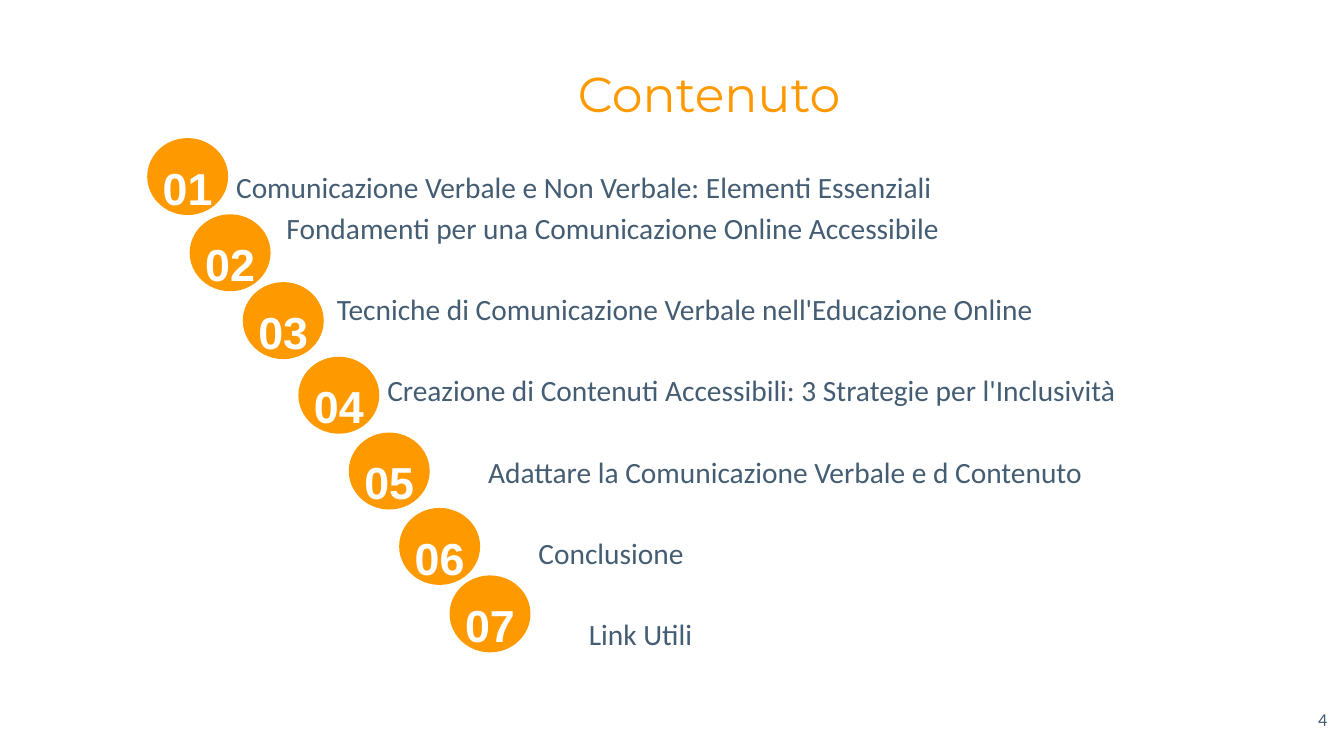
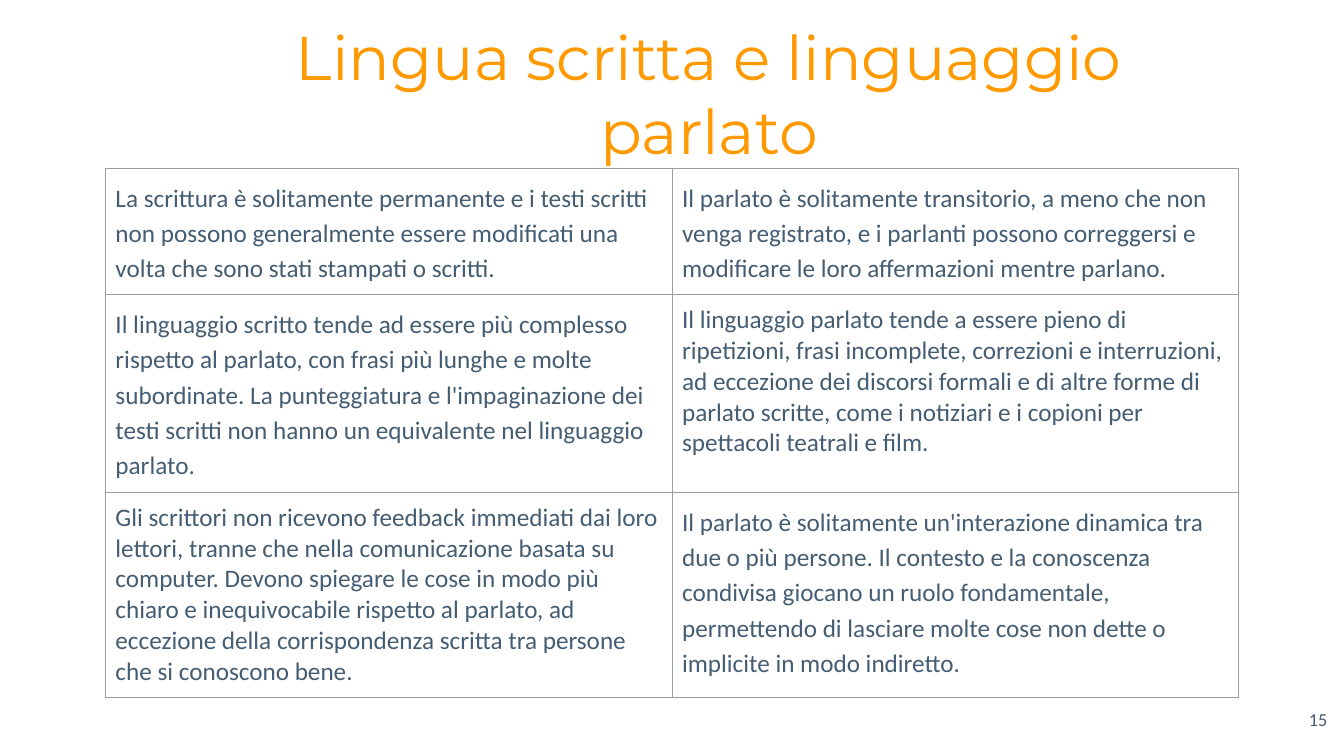
from lxml import etree
from pptx import Presentation
from pptx.dml.color import RGBColor
from pptx.enum import shapes, text
from pptx.oxml.ns import qn
from pptx.util import Cm, Pt

COLORS = {"accent": "FF9900", "body": "445D73", "white": "FFFFFF", "rule": "9E9E9E"}


def format_frame(tf, size, font, color, align, inset, spacing=1.0, bold=False):
    """Set the insets of a text frame and the look of all its runs."""
    tf.margin_left = tf.margin_right = tf.margin_top = tf.margin_bottom = Cm(inset)
    for p in tf.paragraphs:
        p.alignment = align
        p.line_spacing = spacing
        for r in p.runs:
            r.font.size = Pt(size)
            r.font.name = font
            r.font.bold = bold
            r.font.color.rgb = RGBColor.from_string(COLORS[color])


def add_slide(layout, title, title_size, number):
    """Add a slide with the shared title style and page number."""
    s = prs.slides.add_slide(prs.slide_layouts[layout])
    sp = s.shapes.title
    sp.left, sp.top, sp.width, sp.height = Cm(4.32), Cm(1.3), Cm(27.1), Cm(2.1)
    tf = sp.text_frame
    tf.text = title
    tf.auto_size = text.MSO_AUTO_SIZE.NONE
    tf.vertical_anchor = text.MSO_ANCHOR.MIDDLE
    format_frame(tf, title_size, "Montserrat", "accent", text.PP_ALIGN.CENTER, 0.36)

    tf = s.shapes.add_textbox(Cm(31.67), Cm(17.6), Cm(2.03), Cm(1.45)).text_frame
    tf.text = number
    tf.word_wrap = True
    format_frame(tf, 13, "Calibri", "body", text.PP_ALIGN.RIGHT, 0.25)
    return s


prs = Presentation()
prs.slide_width, prs.slide_height = Cm(33.87), Cm(19.05)

# Contents: topic, indent, space before (pt), left and top of the number disc
topics = [
    ("Comunicazione Verbale e Non Verbale: Elementi Essenziali", 0, 0, 3.71, 3.48),
    ("Fondamenti per una Comunicazione Online Accessibile", 1.27, 0, 4.78, 5.4),
    ("Tecniche di Comunicazione Verbale nell'Educazione Online", 2.54, 29, 6.12, 7.11),
    ("Creazione di Contenuti Accessibili: 3 Strategie per l'Inclusività", 3.81, 29, 7.52, 8.99),
    ("Adattare la Comunicazione Verbale e d Contenuto", 6.35, 29, 8.79, 10.9),
    ("Conclusione", 7.62, 29, 10.06, 12.8),
    ("Link Utili", 8.89, 29, 11.33, 14.5),
]
s = add_slide(1, "Contenuto", 35, "4")
body = s.placeholders[1]
body.left, body.top, body.width, body.height = Cm(5.59), Cm(3.78), Cm(27.66), Cm(12.4)
tf = body.text_frame
tf.text = "\n".join(topic[0] for topic in topics)
tf.auto_size = text.MSO_AUTO_SIZE.NONE
for p, (_, indent, before, _, _) in zip(tf.paragraphs, topics):
    pPr = p._p.get_or_add_pPr()
    pPr.set("marL", str(Cm(indent)))
    pPr.set("indent", "0")
    etree.SubElement(pPr, qn("a:buNone"))
    p.space_before = Pt(before)
format_frame(tf, 21, "Calibri", "body", text.PP_ALIGN.LEFT, 0.36, 1.15)

for n, (_, _, _, left, top) in enumerate(topics, 1):
    disc = s.shapes.add_shape(shapes.MSO_SHAPE.OVAL, Cm(left), Cm(top), Cm(2.04), Cm(1.94))
    disc.shadow.inherit = False
    disc.fill.solid()
    disc.fill.fore_color.rgb = RGBColor.from_string(COLORS["accent"])
    disc.line.fill.background()
    tf = disc.text_frame
    tf.text = f"{n:02}"
    tf.word_wrap = False
    tf.vertical_anchor = text.MSO_ANCHOR.MIDDLE
    format_frame(tf, 32, "Arial", "white", text.PP_ALIGN.CENTER, 0.05, 1.4, True)

# Written and spoken language: each cell holds its text and line spacing
rows = [
    [("La scrittura è solitamente permanente e i testi scritti non possono generalmente "
      "essere modificati una volta che sono stati stampati o scritti.", 1.15),
     ("Il parlato è solitamente transitorio, a meno che non venga registrato, e i parlanti "
      "possono correggersi e modificare le loro affermazioni mentre parlano.", 1.15)],
    [("Il linguaggio scritto tende ad essere più complesso rispetto al parlato, con frasi più "
      "lunghe e molte subordinate. La punteggiatura e l'impaginazione dei testi scritti non "
      "hanno un equivalente nel linguaggio parlato.", 1.15),
     ("Il linguaggio parlato tende a essere pieno di ripetizioni, frasi incomplete, correzioni "
      "e interruzioni, ad eccezione dei discorsi formali e di altre forme di parlato scritte, "
      "come i notiziari e i copioni per spettacoli teatrali e film.", 1.0)],
    [("Gli scrittori non ricevono feedback immediati dai loro lettori, tranne che nella "
      "comunicazione basata su computer. Devono spiegare le cose in modo più chiaro e "
      "inequivocabile rispetto al parlato, ad eccezione della corrispondenza scritta tra "
      "persone che si conoscono bene.", 1.0),
     ("Il parlato è solitamente un'interazione dinamica tra due o più persone. Il contesto e la "
      "conoscenza condivisa giocano un ruolo fondamentale, permettendo di lasciare molte cose "
      "non dette o implicite in modo indiretto.", 1.15)],
]
row_heights = [3.18, 4.98, 5.16]
s = add_slide(5, "Lingua scritta e linguaggio parlato", 44, "15")
table = s.shapes.add_table(3, 2, Cm(2.66), Cm(4.25), Cm(28.56), Cm(sum(row_heights))).table
table.first_row = table.horz_banding = False
for i, row in enumerate(rows):
    table.rows[i].height = Cm(row_heights[i])
    for j, (wording, spacing) in enumerate(row):
        cell = table.cell(i, j)
        cell.margin_left = cell.margin_right = cell.margin_top = cell.margin_bottom = Cm(0.25)
        tcPr = cell._tc.get_or_add_tcPr()
        for side in ("lnL", "lnR", "lnT", "lnB"):
            ln = etree.SubElement(tcPr, qn(f"a:{side}"), w=str(Pt(0.75)))
            fill = etree.SubElement(ln, qn("a:solidFill"))
            etree.SubElement(fill, qn("a:srgbClr"), val=COLORS["rule"])
        cell.fill.background()
        tf = cell.text_frame
        tf.text = wording
        format_frame(tf, 18, "Calibri", "body", text.PP_ALIGN.LEFT, 0.25, spacing)
        # Cell insets belong to the cell, so its text body keeps none of its own
        for name in ("lIns", "rIns", "tIns", "bIns"):
            tf._txBody.bodyPr.attrib.pop(name, None)

prs.save("out.pptx")
